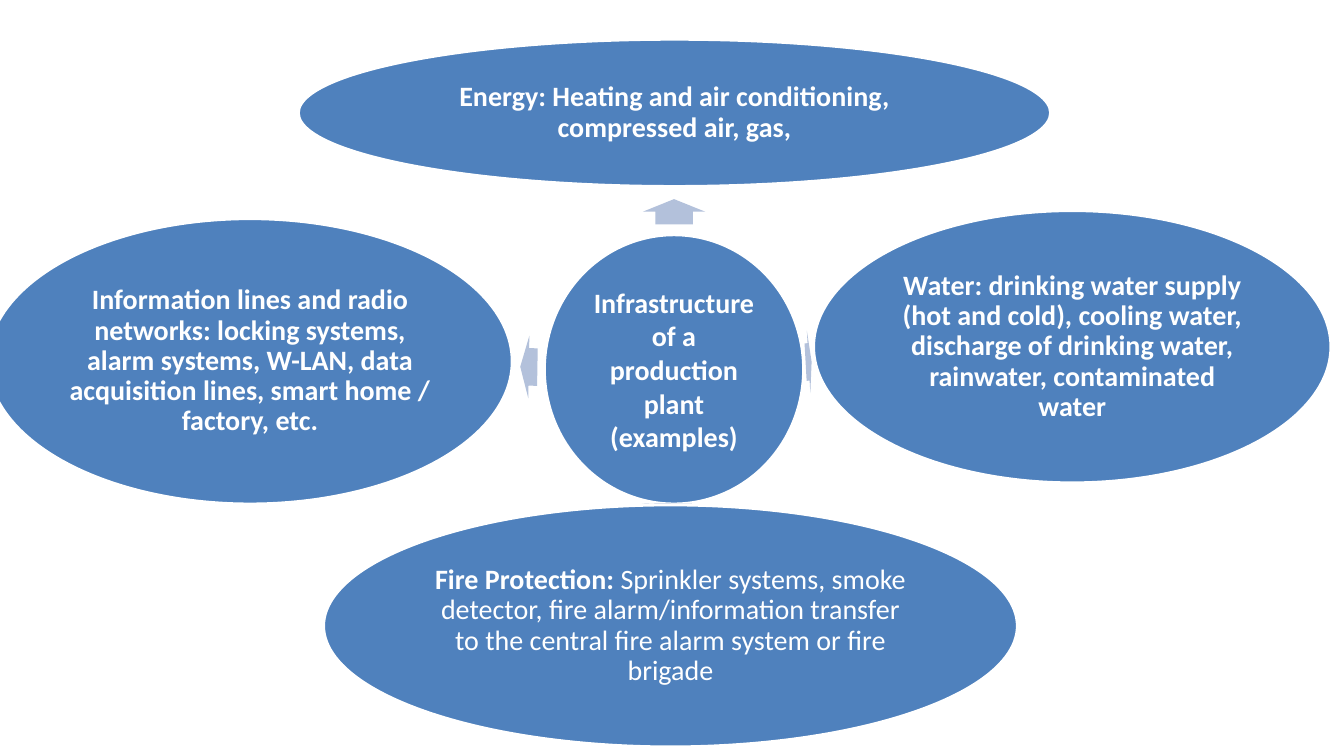
from pptx import Presentation
from pptx.dml.color import RGBColor
from pptx.enum.shapes import MSO_SHAPE
from pptx.enum.text import MSO_ANCHOR, PP_ALIGN
from pptx.util import Emu, Pt

PX = 9144
COLORS = {"ellipse": "4F81BD", "arrow": "B3C1DB", "white": "FFFFFF"}
HUB = (540, 233, 257, 267)
HUB_TEXT = [("Infrastructure of a production plant (examples)", True)]
SPOKES = [
    ((656, 179, 25, 62), 270, (296, 39, 746, 146),
     [("Energy: Heating and air conditioning, compressed air, gas,", True)]),
    ((799, 328, 6, 62), 356.8, (807, 209, 513, 270),
     [("Water: drinking water supply (hot and cold), cooling water, discharge of "
       "drinking water, rainwater, contaminated water", True)]),
    ((667, 469, 1, 62), 90.6, (321, 501, 688, 240),
     [("Fire Protection: ", True),
      ("Sprinkler systems, smoke detector, fire alarm/information transfer to the "
       "central fire alarm system or fire brigade", False)]),
    ((516, 333, 17, 62), 181, (-12, 217, 520, 283),
     [("Information lines and radio networks: locking systems, alarm systems, W-LAN, "
       "data acquisition lines, smart home / factory, etc.", True)]),
]


def px(value):
    """Turn a length in px into EMU."""
    return Emu(round(value * PX))


def color(name):
    """Look up a named colour."""
    return RGBColor.from_string(COLORS[name])


def add_filled(slide, preset, box, fill):
    """Add a preset shape with a plain fill and no shadow."""
    shape = slide.shapes.add_shape(preset, *map(px, box))
    shape.shadow.inherit = False
    shape.fill.solid()
    shape.fill.fore_color.rgb = color(fill)
    return shape


def write_text(shape, runs, size=20, font="Calibri", line_spacing=0.9):
    """Fill a shape with one centred paragraph of (text, bold) runs."""
    frame = shape.text_frame
    frame.word_wrap = True
    frame.vertical_anchor = MSO_ANCHOR.MIDDLE
    frame.margin_left = frame.margin_right = px(3)
    frame.margin_top = frame.margin_bottom = px(3)
    paragraph = frame.paragraphs[0]
    paragraph.alignment = PP_ALIGN.CENTER
    paragraph.line_spacing = line_spacing
    paragraph.space_after = Pt(size * 0.35)
    for text, bold in runs:
        run = paragraph.add_run()
        run.text = text
        run.font.name = font
        run.font.size = Pt(size)
        run.font.bold = bold
        run.font.color.rgb = color("white")


def add_ellipse(slide, box, runs, **text_format):
    """Add a white-edged ellipse with its text."""
    ellipse = add_filled(slide, MSO_SHAPE.OVAL, box, "ellipse")
    ellipse.line.color.rgb = color("white")
    ellipse.line.width = Pt(2)
    write_text(ellipse, runs, **text_format)


def add_arrow(slide, box, rotation):
    """Add a block arrow turned away from the hub."""
    arrow = add_filled(slide, MSO_SHAPE.RIGHT_ARROW, box, "arrow")
    arrow.line.fill.background()
    arrow.adjustments[0] = 0.6
    arrow.adjustments[1] = 0.5
    arrow.rotation = rotation


def build_radial_slide(presentation):
    """Build the hub with its four infrastructure areas."""
    slide = presentation.slides.add_slide(presentation.slide_layouts[6])
    add_ellipse(slide, HUB, HUB_TEXT, line_spacing=1.0)
    for arrow_box, rotation, ellipse_box, runs in SPOKES:
        add_arrow(slide, arrow_box, rotation)
        add_ellipse(slide, ellipse_box, runs)


def main():
    """Create and save the presentation."""
    presentation = Presentation()
    presentation.slide_width = px(1333)
    presentation.slide_height = px(750)
    build_radial_slide(presentation)
    presentation.save("out.pptx")


if __name__ == "__main__":
    main()
